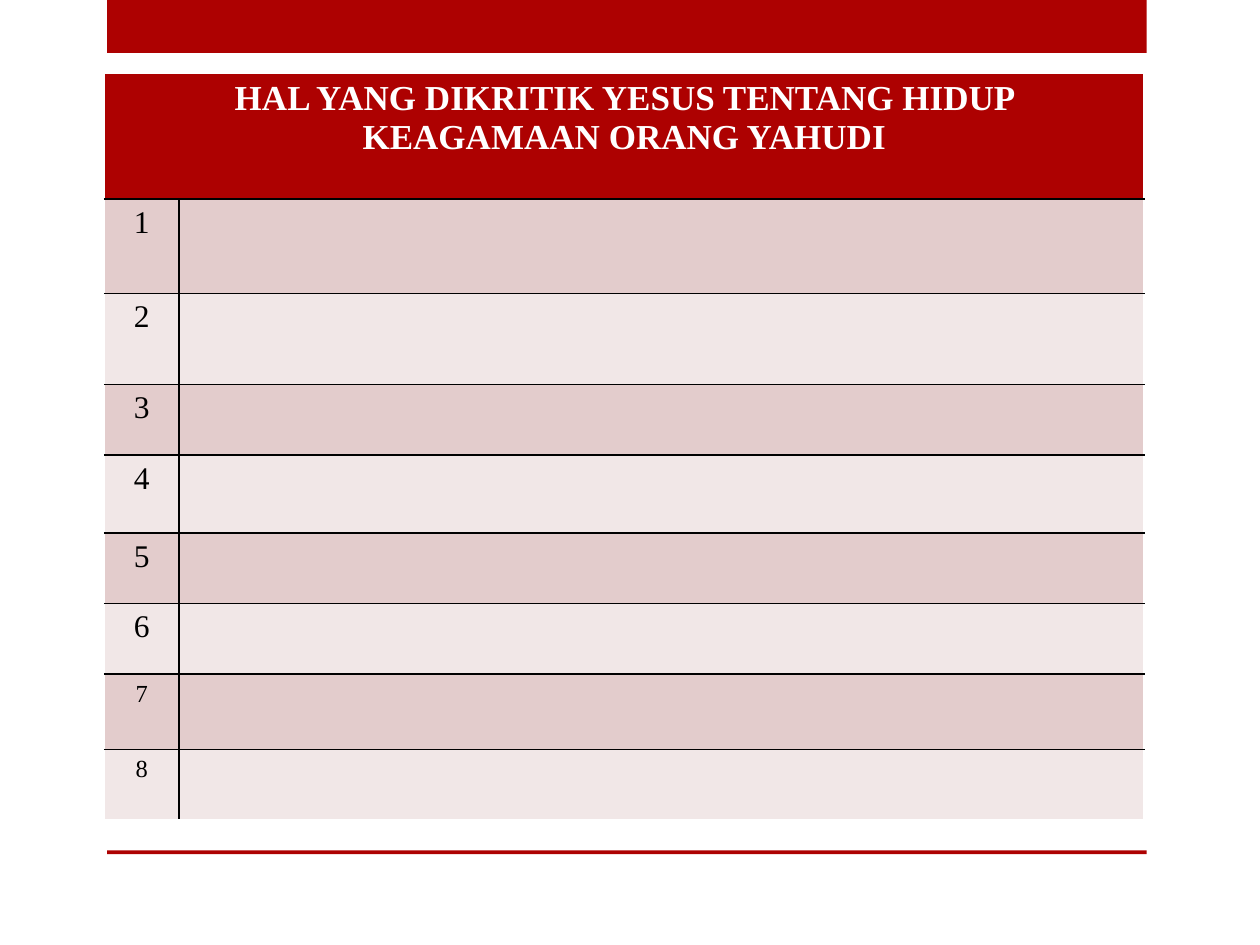
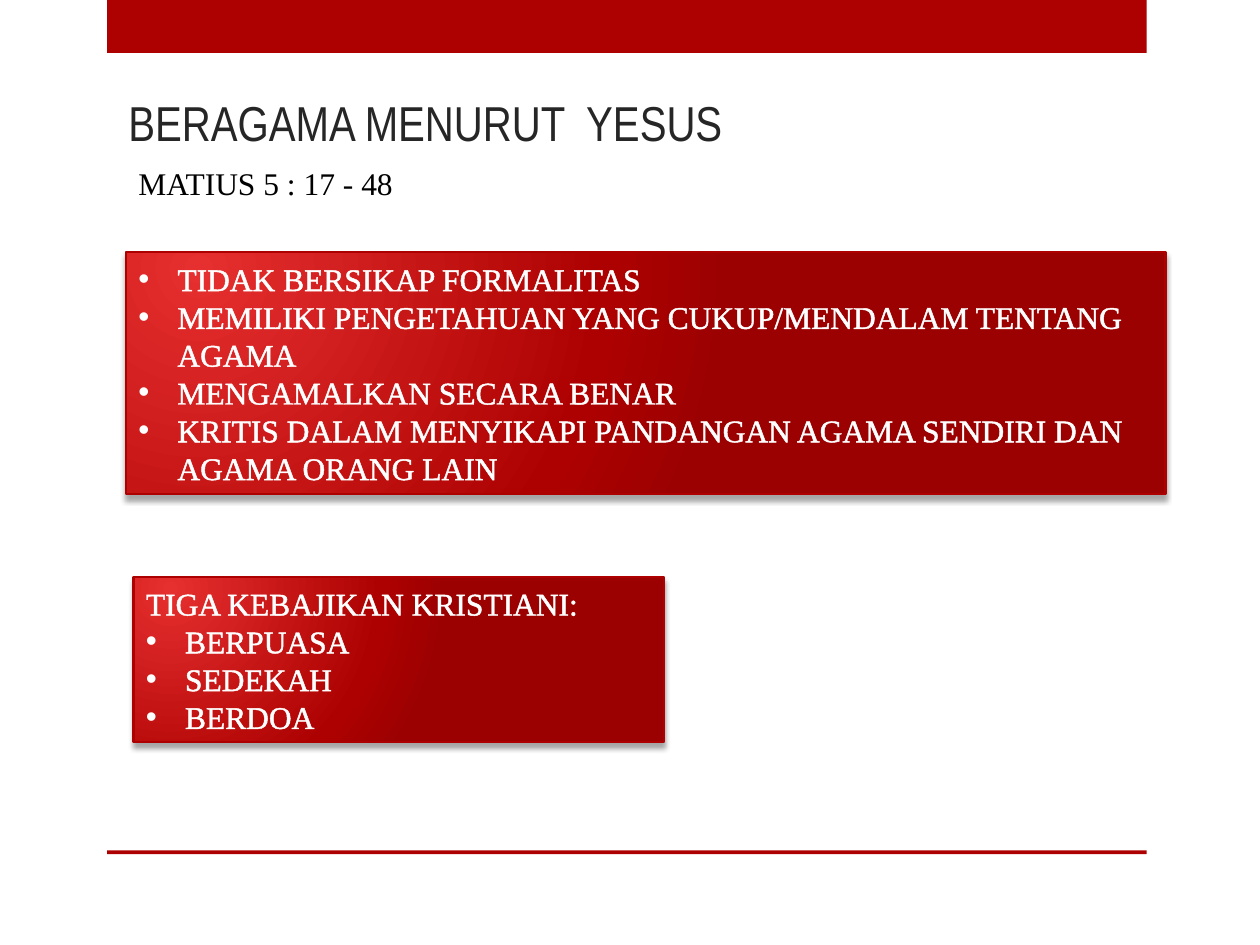
from dataclasses import dataclass

from pptx import Presentation
from pptx.dml.color import RGBColor
from pptx.enum.shapes import MSO_SHAPE
from pptx.enum.text import MSO_ANCHOR, PP_ALIGN
from pptx.oxml import parse_xml
from pptx.oxml.ns import nsdecls
from pptx.util import Inches, Pt


@dataclass(frozen=True)
class Theme:
    red: str = "AD0101"
    glow: str = "E62F2F"
    deep: str = "9C0101"
    dark: str = "E3CCCC"
    pale: str = "F1E7E7"
    white: str = "FFFFFF"
    black: str = "000000"
    ink: str = "262626"
    serif: str = "Times New Roman"
    narrow: str = "Arial Narrow"
    title: int = 28
    head: int = 20
    body: int = 18
    small: int = 14


def node(tag, attrs="", inner=""):
    return parse_xml(f"<a:{tag} {nsdecls('a')} {attrs}>{inner}</a:{tag}>")


def paint(color, inner=""):
    return f'<a:srgbClr val="{color}">{inner}</a:srgbClr>'


def solid(color):
    return f"<a:solidFill>{paint(color)}</a:solidFill>"


class Deck:
    def __init__(self, theme):
        self.theme = theme
        self.file = Presentation()
        self.file.slide_width = Inches(10)
        self.file.slide_height = Inches(7.5)
        self.slide = None

    def page(self):
        self.slide = self.file.slides.add_slide(self.file.slide_layouts[6])
        for top, height in ((0, 0.42), (6.75, 0.03)):
            band = self.rect(0.85, top, 8.25, height)
            band.fill.solid()
            band.fill.fore_color.rgb = RGBColor.from_string(self.theme.red)
            band.line.fill.background()

    def rect(self, *box):
        shape = self.slide.shapes.add_shape(MSO_SHAPE.RECTANGLE, *map(Inches, box))
        shape.shadow.inherit = False
        return shape

    def put(self, para, text, size, color, font=None, bold=False):
        run = para.add_run()
        run.text = text
        run.font.size = Pt(size)
        run.font.name = font or self.theme.serif
        run.font.bold = bold
        run.font.color.rgb = RGBColor.from_string(color)
        return run

    def text(self, box, text, size, color, font=None, anchor=MSO_ANCHOR.TOP):
        frame = self.slide.shapes.add_textbox(*map(Inches, box)).text_frame
        frame.word_wrap = True
        frame.vertical_anchor = anchor
        self.put(frame.paragraphs[0], text, size, color, font)

    def panel(self, box, items, lead=None):
        look = self.theme
        shape = self.rect(*box)
        shape.line.color.rgb = RGBColor.from_string(look.red)
        shape.line.width = Pt(1.25)
        self.glow(shape)
        frame = shape.text_frame
        frame.word_wrap = True
        lines = ([lead] if lead else []) + items
        for index, line in enumerate(lines):
            para = frame.add_paragraph() if index else frame.paragraphs[0]
            para.alignment = PP_ALIGN.LEFT
            if line != lead:
                self.bullet(para)
            run = self.put(para, line, look.body, look.white)
            edge = node("ln", f'w="{Pt(1.45)}"', solid(look.white))
            run.font._element.insert(0, edge)

    def glow(self, shape):
        look = self.theme
        shape.fill.gradient()
        props = shape._element.spPr
        grad = props.find("{*}gradFill")
        for child in list(grad):
            grad.remove(child)
        stops = ((0, look.glow), (76, look.red), (100, look.deep))
        grad.append(node("gsLst", "", "".join(
            f'<a:gs pos="{pos * 1000}">{paint(color)}</a:gs>' for pos, color in stops)))
        grad.append(node("path", 'path="circle"',
                         '<a:fillToRect l="15000" t="15000" r="100000" b="100000"/>'))
        shade = paint(look.black, '<a:alpha val="35000"/>')
        props.find("{*}effectLst").append(node(
            "outerShdw",
            f'blurRad="{Pt(3)}" dist="{Pt(3)}" dir="5400000" rotWithShape="0"', shade))

    def bullet(self, para):
        props = para._p.get_or_add_pPr()
        props.set("marL", str(Inches(0.31)))
        props.set("indent", str(-Inches(0.31)))
        props.append(node("buFont", 'typeface="Arial"'))
        props.append(node("buChar", 'char="•"'))

    def cell(self, cell, fill, edges):
        cell.fill.solid()
        cell.fill.fore_color.rgb = RGBColor.from_string(fill)
        props = cell._tc.get_or_add_tcPr()
        for index, (side, color) in enumerate(zip("LRTB", edges)):
            props.insert(index, node(f"ln{side}", f'w="{Pt(1)}"', solid(color)))

    def table(self, box, cols, rows, title, sizes):
        look = self.theme
        grid = self.slide.shapes.add_table(
            len(rows), len(cols), *map(Inches, box)).table
        grid.horz_banding = False
        for col, width in zip(grid.columns, cols):
            col.width = Inches(width)
        for row, height in zip(grid.rows, rows):
            row.height = Inches(height)
        last = len(rows) - 1
        for r in range(len(rows)):
            fill = look.red if r == 0 else look.dark if r % 2 else look.pale
            mid = look.black if r else look.white
            base = look.white if r == last else look.black
            self.cell(grid.cell(r, 0), fill, (look.white, mid, mid, base))
            self.cell(grid.cell(r, 1), fill, (mid, look.white, mid, base))
        grid.cell(0, 0).merge(grid.cell(0, 1))
        self.label(grid.cell(0, 0), title, look.head, look.white, True)
        for r, size in enumerate(sizes, 1):
            self.label(grid.cell(r, 0), str(r), size, look.black)

    def label(self, cell, text, size, color, bold=False):
        para = cell.text_frame.paragraphs[0]
        para.alignment = PP_ALIGN.CENTER
        self.put(para, text, size, color, bold=bold)


def main():
    look = Theme()
    deck = Deck(look)

    deck.page()
    deck.table(
        (0.83, 0.58, 8.25, 5.92), (0.59, 7.66),
        (1, 0.75, 0.72, 0.56, 0.62, 0.56, 0.56, 0.6, 0.56),
        "HAL YANG DIKRITIK YESUS TENTANG HIDUP KEAGAMAAN ORANG YAHUDI",
        [look.body] * 6 + [look.small] * 2)

    deck.page()
    deck.text((0.92, 0.67, 7.42, 0.58), "BERAGAMA MENURUT  YESUS",
              look.title, look.ink, look.narrow, MSO_ANCHOR.BOTTOM)
    deck.text((1, 1.25, 3.83, 0.4), "MATIUS 5 : 17 - 48", look.body, look.black)
    deck.panel((1, 2, 8.25, 1.92), [
        "TIDAK BERSIKAP FORMALITAS",
        "MEMILIKI PENGETAHUAN YANG CUKUP/MENDALAM TENTANG AGAMA",
        "MENGAMALKAN SECARA BENAR",
        "KRITIS DALAM MENYIKAPI PANDANGAN AGAMA SENDIRI DAN AGAMA ORANG LAIN",
    ])
    deck.panel((1.06, 4.58, 4.21, 1.31), ["BERPUASA", "SEDEKAH", "BERDOA"],
               "TIGA KEBAJIKAN KRISTIANI:")

    deck.file.save("out.pptx")


if __name__ == "__main__":
    main()
